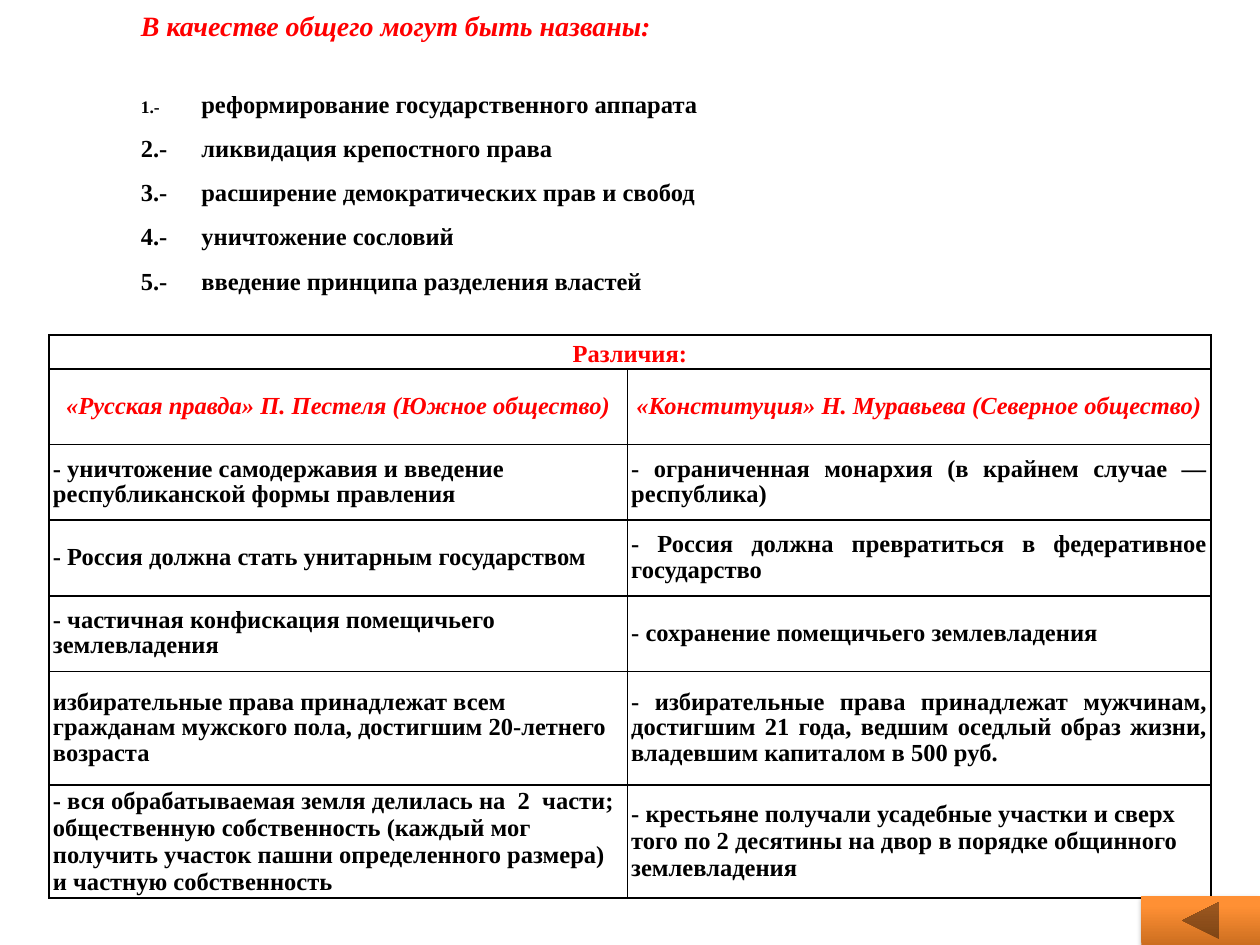
from lxml.etree import SubElement
from pptx import Presentation
from pptx.dml.color import RGBColor
from pptx.enum.shapes import MSO_SHAPE as Shape
from pptx.enum.text import MSO_ANCHOR as Anchor, MSO_AUTO_SIZE as AutoSize, PP_ALIGN as Align
from pptx.oxml.ns import qn
from pptx.util import Inches, Pt

HEADING = "В качестве общего могут быть названы:"
COMMON = [
    "реформирование государственного аппарата",
    "ликвидация крепостного права",
    "расширение демократических прав и свобод",
    "уничтожение сословий",
    "введение принципа разделения властей",
]

TABLE_TITLE = "Различия:"
SOCIETIES = [
    ("«Русская правда» П. Пестеля (Южное общество)", 14.9),
    ("«Конституция» Н. Муравьева (Северное общество)", 15.1),
]
DIFFERENCES = [
    [("- уничтожение самодержавия и введение республиканской формы правления", 14.6),
     ("- ограниченная монархия (в крайнем случае — республика)", 14.6)],
    [("- Россия должна стать унитарным государством", 14.9),
     ("- Россия должна превратиться в федеративное государство", 14.6)],
    [("- частичная конфискация помещичьего землевладения", 14.6),
     ("- сохранение помещичьего землевладения", 14.9)],
    [("избирательные права принадлежат всем гражданам мужского пола, достигшим 20-летнего возраста", 14.6),
     ("- избирательные права принадлежат мужчинам, достигшим 21 года, ведшим оседлый образ жизни, "
      "владевшим капиталом в 500 руб.", 14.6)],
    [("- вся обрабатываемая земля делилась на  2  части;  общественную собственность "
      "(каждый мог получить участок пашни определенного размера) и частную собственность", 15.4),
     ("- крестьяне получали усадебные участки и сверх того по 2 десятины на двор "
      "в порядке общинного землевладения", 15.4)],
]
COLUMN_WIDTHS = [4.59, 4.63]
ROW_HEIGHTS = [0.26] + [0.6] * 4 + [0.9] * 2

THEME = {
    "font": "Times New Roman",
    "accent": "FF0000",
    "ink": "000000",
    "heading": 16,
    "body": 14,
    "marker": 10,
    "button": [(0, "CC6E20"), (80, "FF9034"), (100, "FF9136")],
}


def apply(target, **values):
    for name, value in values.items():
        setattr(target, name, value)


def add_node(parent, tag, **values):
    return SubElement(parent, qn(tag), {name: str(value) for name, value in values.items()})


def add_color(parent, color, alpha=100):
    node = add_node(parent, "a:srgbClr", val=color)
    if alpha < 100:
        add_node(node, "a:alpha", val=alpha * 1000)


def add_span(para, text, size=THEME["body"], color=THEME["ink"], italic=False):
    span = para.add_run()
    span.text = text
    apply(span.font, name=THEME["font"], size=Pt(size), bold=True, italic=italic)
    span.font.color.rgb = RGBColor.from_string(color)


def indent(para, numbered=False):
    props = para._p.get_or_add_pPr()
    props.set("marL", "0")
    props.set("indent", str(Inches(1.02)))
    if numbered:
        add_node(props, "a:buFontTx")
        add_node(props, "a:buAutoNum", type="arabicPeriod")
    tabs = add_node(props, "a:tabLst")
    add_node(tabs, "a:tab", pos=Inches(0.27), algn="l")


def add_common(page):
    box = page.shapes.add_textbox(Inches(0), Inches(0), Inches(10), Inches(2.41))
    frame = box.text_frame
    apply(frame, word_wrap=True, vertical_anchor=Anchor.MIDDLE, auto_size=AutoSize.SHAPE_TO_FIT_TEXT)
    para = frame.paragraphs[0]
    para.space_after = Pt(18.4)
    indent(para)
    add_span(para, HEADING, THEME["heading"], THEME["accent"], True)
    for index, text in enumerate(COMMON):
        para = frame.add_paragraph()
        para.line_spacing = 1.5
        indent(para, numbered=True)
        add_span(para, "-\t", THEME["body"] if index else THEME["marker"])
        add_span(para, text)


def fill_cell(cell, text, leading, align, **style):
    apply(cell, vertical_anchor=Anchor.MIDDLE, margin_left=Inches(0.03),
          margin_right=Inches(0.03), margin_top=0, margin_bottom=0)
    para = cell.text_frame.paragraphs[0]
    apply(para, alignment=align, line_spacing=leading)
    if text:
        add_span(para, text, **style)
    for side in ("a:lnL", "a:lnR", "a:lnT", "a:lnB"):
        line = add_node(cell._tc.get_or_add_tcPr(), side, w=Pt(1))
        add_color(add_node(line, "a:solidFill"), THEME["ink"])
    cell.fill.background()


def add_differences(page):
    table = page.shapes.add_table(
        len(ROW_HEIGHTS), len(COLUMN_WIDTHS), Inches(0.39), Inches(2.66),
        Inches(sum(COLUMN_WIDTHS)), Inches(sum(ROW_HEIGHTS))).table
    apply(table, first_row=False, horz_banding=False)
    for column, width in zip(table.columns, COLUMN_WIDTHS):
        column.width = Inches(width)
    for row, height in zip(table.rows, ROW_HEIGHTS):
        row.height = Inches(height)

    table.cell(0, 0).merge(table.cell(0, 1))
    for col, text in enumerate((TABLE_TITLE, "")):
        fill_cell(table.cell(0, col), text, 1.15, Align.CENTER, color=THEME["accent"])
    for col, (text, leading) in enumerate(SOCIETIES):
        fill_cell(table.cell(1, col), text, Pt(leading), Align.CENTER,
                  color=THEME["accent"], italic=True)
    for row, pair in enumerate(DIFFERENCES, 2):
        for col, (text, leading) in enumerate(pair):
            justified = col == 1 and row < len(ROW_HEIGHTS) - 1
            fill_cell(table.cell(row, col), text, Pt(leading),
                      Align.JUSTIFY if justified else Align.LEFT)


def add_button(page):
    button = page.shapes.add_shape(Shape.ACTION_BUTTON_BACK_OR_PREVIOUS,
                                   Inches(9.06), Inches(7.11), Inches(0.94), Inches(0.39))
    props = button._element.spPr
    gradient = add_node(props, "a:gradFill", rotWithShape=1)
    stops = add_node(gradient, "a:gsLst")
    for position, color in THEME["button"]:
        add_color(add_node(stops, "a:gs", pos=position * 1000), color)
    add_node(gradient, "a:lin", ang=270 * 60000, scaled=0)
    button.line.fill.background()
    button.shadow.inherit = False
    shadow = add_node(props.find(qn("a:effectLst")), "a:outerShdw", blurRad=Pt(3.1),
                      dist=Pt(1.8), dir=90 * 60000, rotWithShape=0)
    add_color(shadow, THEME["ink"], 35)


def main():
    deck = Presentation()
    apply(deck, slide_width=Inches(10), slide_height=Inches(7.5))
    page = deck.slides.add_slide(deck.slide_layouts[6])
    add_common(page)
    add_differences(page)
    add_button(page)
    deck.save("out.pptx")


if __name__ == "__main__":
    main()
